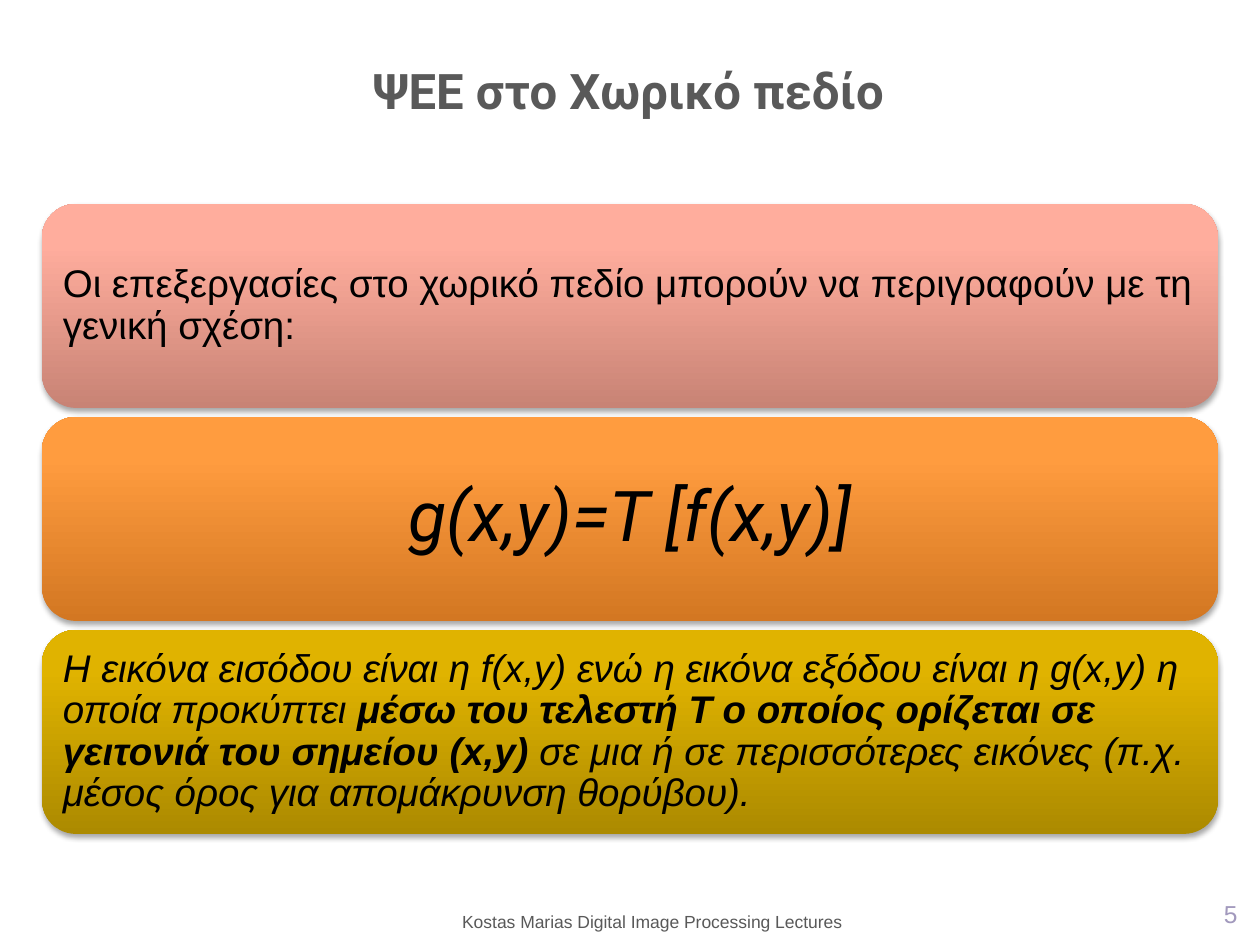
from lxml import etree
from pptx import Presentation
from pptx.dml.color import RGBColor
from pptx.enum.shapes import MSO_SHAPE
from pptx.enum.text import MSO_ANCHOR, PP_ALIGN

PX = 914400 // 126
ROUNDED = MSO_SHAPE.ROUNDED_RECTANGLE
TOP, MIDDLE, BOTTOM = MSO_ANCHOR.TOP, MSO_ANCHOR.MIDDLE, MSO_ANCHOR.BOTTOM
LEFT, CENTER, RIGHT = PP_ALIGN.LEFT, PP_ALIGN.CENTER, PP_ALIGN.RIGHT
BLACK = RGBColor(0x00, 0x00, 0x00)
GRAY = RGBColor(0x59, 0x59, 0x59)
LILAC = RGBColor(0xA2, 0x99, 0xBD)
POINT = 12700
DRAWING = "http://schemas.openxmlformats.org/drawingml/2006/main"


def write(box, spans, font, size, color, align, anchor, italic=False):
    """Fill a box with one paragraph of (text, bold) spans."""
    frame = box.text_frame
    frame.word_wrap = True
    frame.vertical_anchor = anchor
    para = frame.paragraphs[0]
    para.alignment = align
    for text, bold in spans:
        span = para.add_run()
        span.text = text
        span.font.name = font
        span.font.size = size * POINT
        span.font.color.rgb = color
        span.font.bold = bold
        span.font.italic = italic
    return para


def shade(shape, stops):
    """Give a shape an upward gradient and a soft shadow below it."""
    stop_xml = "".join(
        f'<a:gs pos="{position * 1000}"><a:srgbClr val="{color}"/></a:gs>'
        for position, color in zip((0, 80, 100), stops))
    gradient = etree.fromstring(
        f'<a:gradFill xmlns:a="{DRAWING}" rotWithShape="1"><a:gsLst>{stop_xml}</a:gsLst>'
        '<a:lin ang="16200000" scaled="0"/></a:gradFill>')
    effects = etree.fromstring(
        f'<a:effectLst xmlns:a="{DRAWING}">'
        '<a:outerShdw blurRad="39400" dist="22900" dir="5400000" rotWithShape="0">'
        '<a:srgbClr val="000000"><a:alpha val="35000"/></a:srgbClr>'
        '</a:outerShdw></a:effectLst>')
    shape.line.fill.background()
    properties = shape.element.spPr
    properties.find(f"{{{DRAWING}}}prstGeom").addnext(gradient)
    properties.append(effects)


deck = Presentation()
deck.slide_width = 1260 * PX
deck.slide_height = 945 * PX
page = deck.slides.add_slide(deck.slide_layouts[6])

labels = [
    ((1065, 896, 185, 39), "5", False, "Arial", 14, LILAC, RIGHT, BOTTOM),
    ((69, 905, 1166, 34), "Kostas Marias Digital Image Processing Lectures", False,
     "Arial", 10, GRAY, CENTER, TOP),
    ((21, 32, 1215, 94), "ΨΕΕ στο Χωρικό πεδίο", True, "Roboto", 28, GRAY, CENTER, BOTTOM),
]
for place, text, bold, font, size, color, align, anchor in labels:
    box = page.shapes.add_textbox(*(length * PX for length in place))
    write(box, [(text, bold)], font, size, color, align, anchor)

CARD_TOP, CARD_HEIGHT, CARD_PITCH = 204, 204, 213
cards = [
    (("C88375", "FFAD9D", "FFAF9F"), 11, "Arial", 22, LEFT, False,
     [("Οι επεξεργασίες στο χωρικό πεδίο μπορούν να περιγραφούν με τη γενική σχέση:", False)]),
    (("D37722", "FF9C3F", "FF9C40"), 21, "Roboto", 40, CENTER, True,
     [("g(x,y)=T [f(x,y)]", False)]),
    (("AC8A00", "E0B300", "E1B400"), 11, "Arial", 22, LEFT, True,
     [("Η εικόνα εισόδου είναι η f(x,y) ενώ η εικόνα εξόδου είναι η g(x,y) η οποία προκύπτει ",
       False),
      ("μέσω του τελεστή Τ ο οποίος ορίζεται σε γειτονιά του σημείου (x,y) ", True),
      ("σε μια ή σε περισσότερες εικόνες (π.χ. μέσος όρος για απομάκρυνση θορύβου).", False)]),
]
for row, (stops, inset, font, size, align, italic, spans) in enumerate(cards):
    card = page.shapes.add_shape(ROUNDED, 42 * PX, (CARD_TOP + row * CARD_PITCH) * PX,
                                 1176 * PX, CARD_HEIGHT * PX)
    shade(card, stops)
    frame = card.text_frame
    frame.margin_left = frame.margin_right = inset * PX
    frame.margin_top = frame.margin_bottom = inset * PX
    para = write(card, spans, font, size, BLACK, align, MIDDLE, italic)
    para.line_spacing = 0.9

deck.save("out.pptx")
